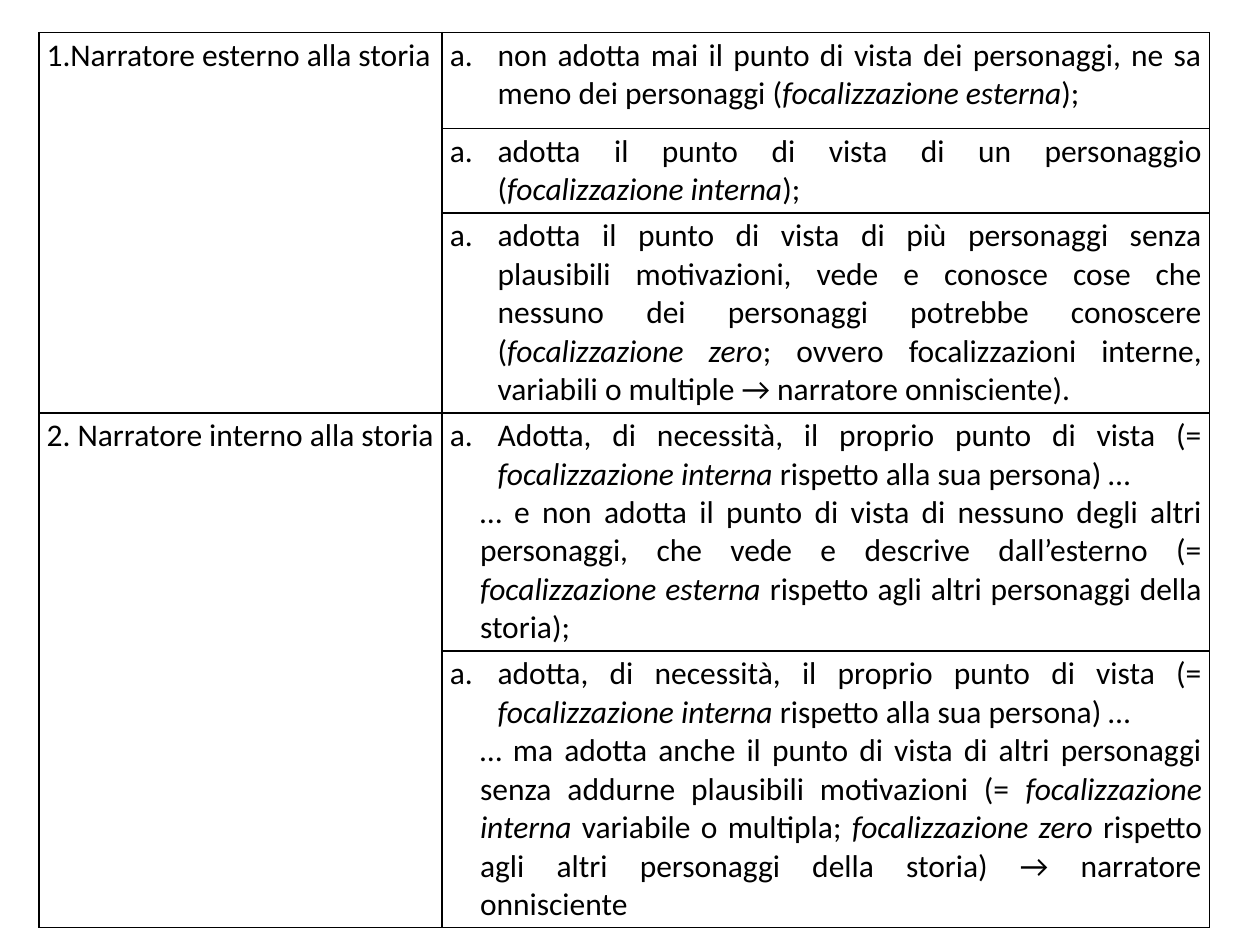
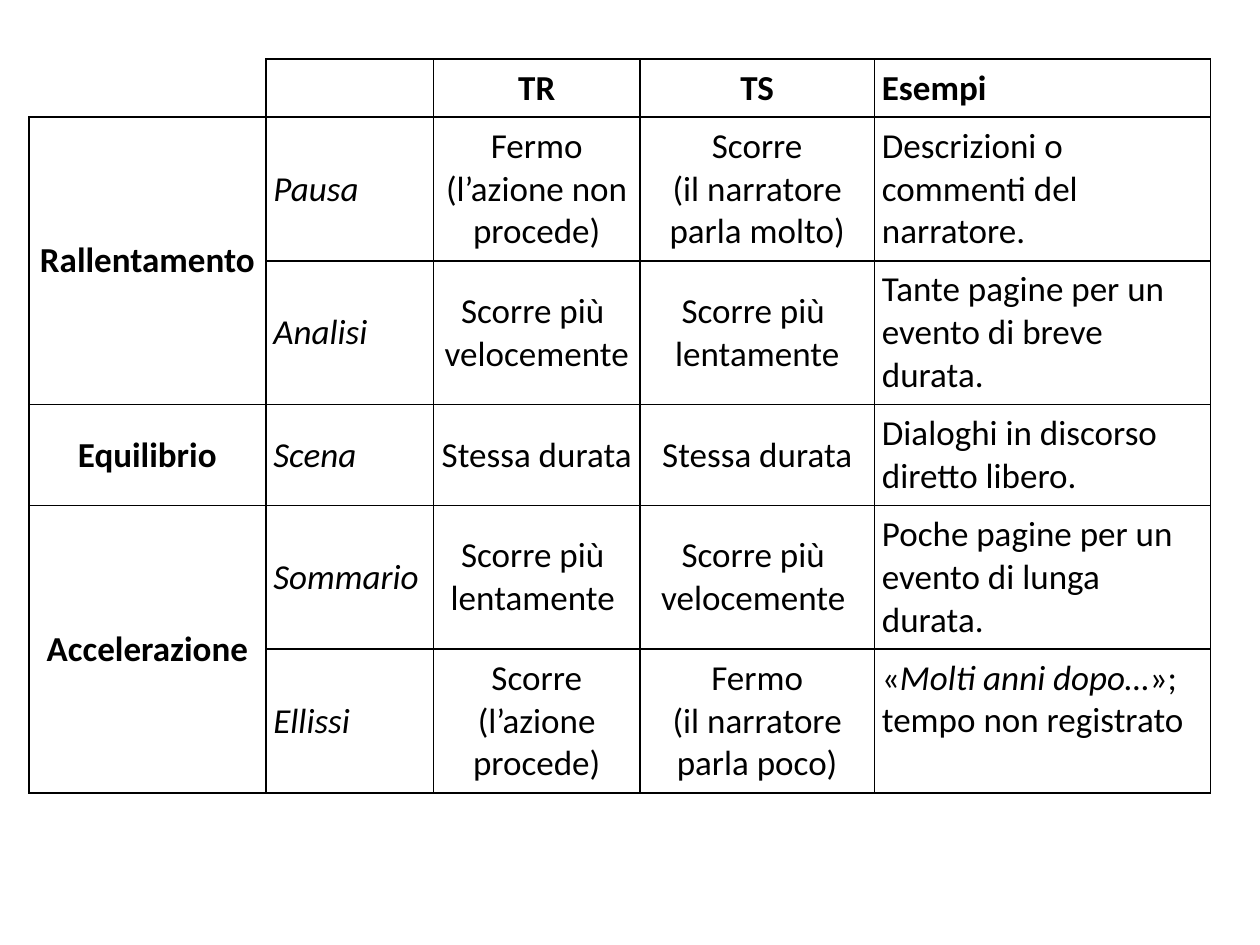
from dataclasses import dataclass
from typing import NamedTuple, Optional

from lxml.etree import SubElement
from pptx import Presentation
from pptx.dml.color import RGBColor
from pptx.enum.text import MSO_ANCHOR, PP_ALIGN
from pptx.oxml.ns import qn
from pptx.util import Inches, Pt


@dataclass(frozen=True)
class Theme:
    font: str = "Calibri"
    ink: str = "000000"
    narrator_size: int = 18
    tempo_size: int = 20
    border_pt: int = 1
    side_inset: float = 0.6


THEME = Theme()

# The slide is a grid of 100 columns by 75 rows
SLIDE_W, SLIDE_H = Inches(10), Inches(7.5)
COLS, ROWS = 100, 75


def x(columns: float) -> int:
    return round(SLIDE_W * columns / COLS)


def y(rows: float) -> int:
    return round(SLIDE_H * rows / ROWS)


class ParaStyle(NamedTuple):
    align: PP_ALIGN = PP_ALIGN.LEFT
    margin: float = 0
    indent: float = 0
    numbering: Optional[str] = None
    bold: bool = False
    italic: bool = False


PLAIN = ParaStyle()
CENTRED = ParaStyle(PP_ALIGN.CENTER)
HEADING = ParaStyle(bold=True)
CENTRED_HEADING = ParaStyle(PP_ALIGN.CENTER, bold=True)
TERM = ParaStyle(italic=True)
NUMBERED = ParaStyle(numbering="arabicPeriod")
LETTERED = ParaStyle(PP_ALIGN.JUSTIFY, 3.8, -3.8, "alphaLcPeriod")
FOLLOW_ON = ParaStyle(PP_ALIGN.JUSTIFY, 2.4)


class Para(NamedTuple):
    text: str  # stretches between asterisks are italic
    style: ParaStyle = PLAIN


@dataclass(frozen=True)
class CellText:
    paras: tuple[Para, ...]
    anchor: MSO_ANCHOR = MSO_ANCHOR.MIDDLE


@dataclass(frozen=True)
class TableSpec:
    left: float
    top: float
    cols: tuple[float, ...]
    rows: tuple[float, ...]
    cells: list[list[Optional[CellText]]]
    merges: tuple[tuple[int, int], ...]  # first and last row in column 0
    size: int
    inset: float
    open_corner: bool = False


def top(*paras: Para) -> CellText:
    return CellText(paras, MSO_ANCHOR.TOP)


def middle(style: ParaStyle, *lines: str) -> CellText:
    return CellText(tuple(Para(line, style) for line in lines))


def write_para(p, para: Para, size: int) -> None:
    style = para.style
    p.alignment = style.align
    pPr = p._p.get_or_add_pPr()
    pPr.set("marL", str(x(style.margin)))
    pPr.set("indent", str(x(style.indent)))
    if style.numbering:
        SubElement(pPr, qn("a:buAutoNum"), type=style.numbering)
    for i, part in enumerate(para.text.split("*")):
        if not part:
            continue
        r = p.add_run()
        r.text = part
        r.font.name = THEME.font
        r.font.size = Pt(size)
        r.font.bold = style.bold
        r.font.italic = style.italic or i % 2 == 1
        r.font.color.rgb = RGBColor.from_string(THEME.ink)


def draw_borders(cell, hidden: str) -> None:
    tcPr = cell._tc.get_or_add_tcPr()
    for i, side in enumerate("LRTB"):
        ln = SubElement(tcPr, qn(f"a:ln{side}"), w=str(Pt(THEME.border_pt)))
        if side in hidden:
            SubElement(ln, qn("a:noFill"))
        else:
            fill = SubElement(ln, qn("a:solidFill"))
            SubElement(fill, qn("a:srgbClr"), val=THEME.ink)
        tcPr.insert(i, ln)  # borders come before the fill


def write_cell(cell, content: CellText, spec: TableSpec) -> None:
    cell.margin_left = cell.margin_right = x(THEME.side_inset)
    cell.margin_top = cell.margin_bottom = y(spec.inset)
    cell.vertical_anchor = content.anchor
    tf = cell.text_frame
    for i, para in enumerate(content.paras):
        p = tf.add_paragraph() if i else tf.paragraphs[0]
        write_para(p, para, spec.size)


def add_table_slide(prs, spec: TableSpec) -> None:
    s = prs.slides.add_slide(prs.slide_layouts[6])
    table = s.shapes.add_table(
        len(spec.rows), len(spec.cols), x(spec.left), y(spec.top),
        x(sum(spec.cols)), y(sum(spec.rows))).table
    table.first_row = table.horz_banding = False
    for column, width in zip(table.columns, spec.cols):
        column.width = x(width)
    for row, height in zip(table.rows, spec.rows):
        row.height = y(height)
    for first, last in spec.merges:
        table.cell(first, 0).merge(table.cell(last, 0))
    for i, row in enumerate(spec.cells):
        for j, content in enumerate(row):
            cell = table.cell(i, j)
            cell.fill.background()
            corner = spec.open_corner and i == j == 0
            draw_borders(cell, "LT" if corner else "")
            if content:
                write_cell(cell, content, spec)


# Slide 1: kinds of narrator and their point of view
OWN_VIEW = ("dotta, di necessità, il proprio punto di vista (= "
            "*focalizzazione interna* rispetto alla sua persona) … ")

NARRATORS = TableSpec(
    left=3.1, top=2.6, cols=(32, 60.9), rows=(7.6, 6.6, 15.6, 18.6, 21.7),
    merges=((0, 2), (3, 4)), size=THEME.narrator_size, inset=0.3,
    cells=[
        [top(Para("Narratore esterno alla storia", NUMBERED)),
         top(Para("non adotta mai il punto di vista dei personaggi, ne sa meno "
                  "dei personaggi (*focalizzazione esterna*);", LETTERED))],
        [None,
         top(Para("adotta il punto di vista di un personaggio "
                  "(*focalizzazione interna*);", LETTERED))],
        [None,
         top(Para("adotta il punto di vista di più personaggi senza plausibili "
                  "motivazioni, vede e conosce cose che nessuno dei personaggi "
                  "potrebbe conoscere (*focalizzazione zero*; ovvero "
                  "focalizzazioni interne, variabili o multiple → narratore "
                  "onnisciente).", LETTERED))],
        [top(Para("2. Narratore interno alla storia")),
         top(Para("A" + OWN_VIEW, LETTERED),
             Para("… e non adotta il punto di vista di nessuno degli altri "
                  "personaggi, che vede e descrive dall’esterno (= "
                  "*focalizzazione esterna* rispetto agli altri personaggi "
                  "della storia);", FOLLOW_ON))],
        [None,
         top(Para("a" + OWN_VIEW, LETTERED),
             Para("… ma adotta anche il punto di vista di altri personaggi "
                  "senza addurne plausibili motivazioni (= *focalizzazione "
                  "interna* variabile o multipla; *focalizzazione zero "
                  "*rispetto agli altri personaggi della storia) → narratore "
                  "onnisciente", FOLLOW_ON))],
    ])


# Slide 2: narrative pace
def pace_row(group: Optional[str], term: str, tr: tuple[str, ...],
             ts: tuple[str, ...], example: str) -> list[Optional[CellText]]:
    return [middle(CENTRED_HEADING, group) if group else None,
            middle(TERM, term), middle(CENTRED, *tr), middle(CENTRED, *ts),
            top(Para(example))]


THREE_LINES = 11.3
PACE = TableSpec(
    left=2.3, top=4.7, cols=(18.8, 13.3, 16.4, 18.6, 26.7),
    rows=(4.6, THREE_LINES, THREE_LINES, 7.9, THREE_LINES, THREE_LINES),
    merges=((1, 2), (4, 5)), size=THEME.tempo_size, inset=0.6,
    open_corner=True,
    cells=[
        [None, None, middle(CENTRED_HEADING, "TR"),
         middle(CENTRED_HEADING, "TS"), middle(HEADING, "Esempi")],
        pace_row("Rallentamento", "Pausa", ("Fermo (l’azione non procede)",),
                 ("Scorre", "(il narratore parla molto)"),
                 "Descrizioni o commenti del narratore."),
        pace_row(None, "Analisi", ("Scorre più ", "velocemente"),
                 ("Scorre più ", "lentamente"),
                 "Tante pagine per un evento di breve durata."),
        pace_row("Equilibrio", "Scena", ("Stessa durata",), ("Stessa durata",),
                 "Dialoghi in discorso diretto libero."),
        pace_row("Accelerazione", "Sommario", ("Scorre più ", "lentamente "),
                 ("Scorre più ", "velocemente "),
                 "Poche pagine per un evento di lunga durata."),
        pace_row(None, "Ellissi", ("Scorre", "(l’azione procede)"),
                 ("Fermo", "(il narratore parla poco)"),
                 "«*Molti anni dopo…*»; tempo non registrato"),
    ])


def main() -> None:
    prs = Presentation()
    prs.slide_width, prs.slide_height = SLIDE_W, SLIDE_H
    for spec in (NARRATORS, PACE):
        add_table_slide(prs, spec)
    prs.save("out.pptx")


if __name__ == "__main__":
    main()
